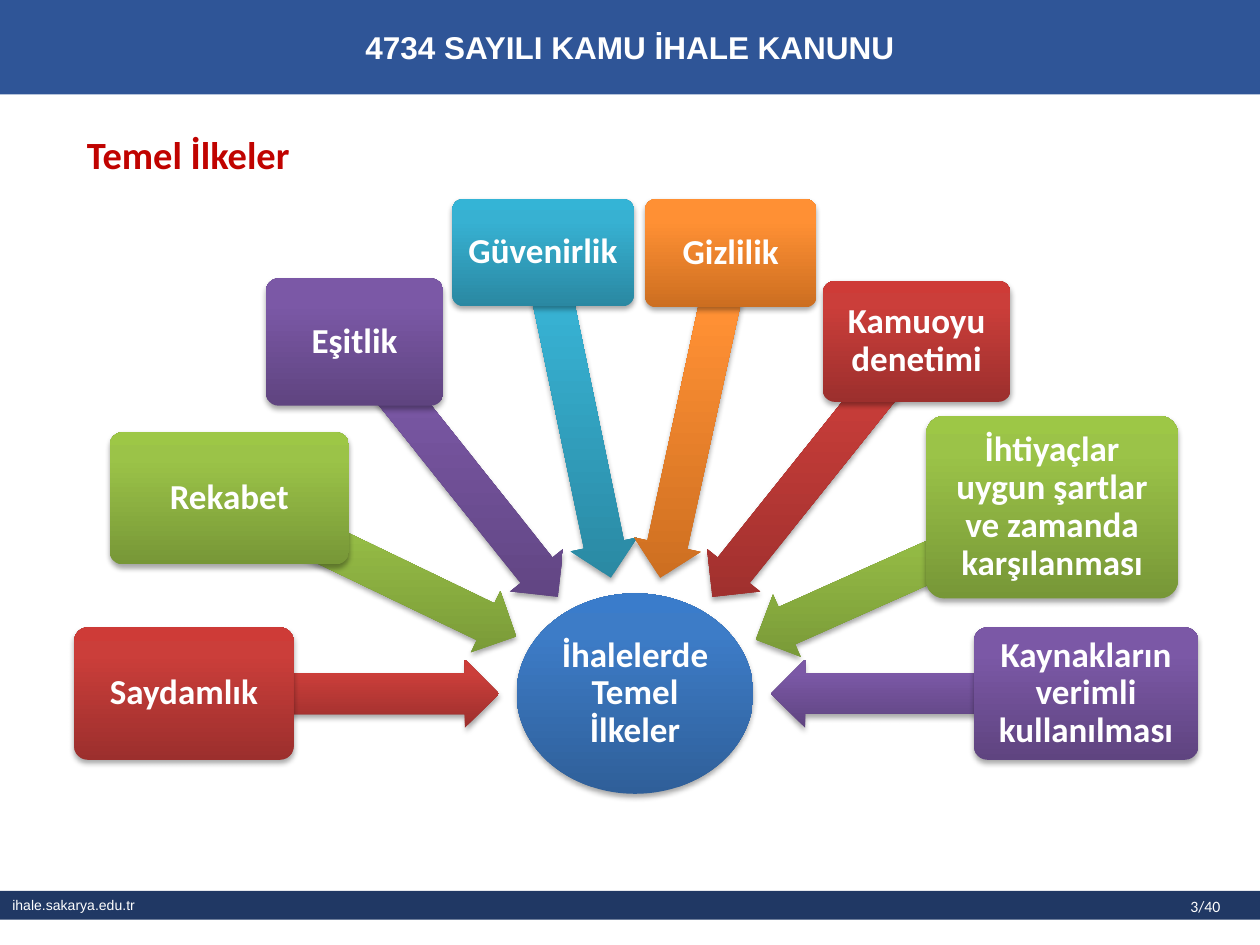
"""Builds the slide on the basic principles of public procurement."""
from math import atan2, cos, degrees, hypot, sin

from pptx import Presentation
from pptx.dml.color import RGBColor
from pptx.enum.shapes import MSO_SHAPE
from pptx.enum.text import MSO_ANCHOR, MSO_AUTO_SIZE, PP_ALIGN
from pptx.oxml import parse_xml
from pptx.oxml.ns import nsdecls
from pptx.util import Inches, Pt

THEME = {
    "band": "2F5597", "foot": "203864", "title": "C00300", "text": "FFFFFF",
    "blue": ("2F5F99", "3D7CC7", "3A7CCB"),
    "red": ("9C2F2D", "CB3E3A", "CE3B37"),
    "green": ("779737", "9BC348", "9DC746"),
    "purple": ("5F4480", "7B58A6", "7C57A8"),
    "teal": ("2A88A2", "37B1D2", "34B4D6"),
    "orange": ("CC6E20", "FF9034", "FF9136"),
    "head": "Arial", "body": "Calibri",
    "size": {"title": 22, "node": 20, "band": 18, "page": 9, "foot": 8},
}
SIZE = THEME["size"]

TITLE = "Temel İlkeler"
BAND = "4734 SAYILI KAMU İHALE KANUNU"
FOOT = "ihale.sakarya.edu.tr"
PAGE = "3/40"
HUB = ("İhalelerde Temel İlkeler", "blue", (4.1, 4.71, 1.88, 1.59))
NODES = [
    ("Saydamlık", "red", (0.59, 4.98, 1.74, 1.05)),
    ("Rekabet", "green", (0.87, 3.43, 1.9, 1.05)),
    ("Eşitlik", "purple", (2.11, 2.21, 1.41, 1.01)),
    ("Güvenirlik", "teal", (3.59, 1.58, 1.44, 0.85)),
    ("Gizlilik", "orange", (5.12, 1.58, 1.36, 0.86)),
    ("Kamuoyu denetimi", "red", (6.53, 2.23, 1.49, 0.96)),
    ("İhtiyaçlar uygun şartlar ve zamanda karşılanması", "green", (7.35, 3.3, 2, 1.45)),
    ("Kaynakların verimli kullanılması", "purple", (7.73, 4.98, 1.78, 1.05)),
]
THICK, GAP = 0.54, 0.14


def write(shape, text, size, font, color="text", bold=True, align=PP_ALIGN.CENTER,
          anchor=MSO_ANCHOR.MIDDLE, inset=None, line=None):
    frame = shape.text_frame
    frame.word_wrap = True
    frame.auto_size = MSO_AUTO_SIZE.NONE
    frame.vertical_anchor = anchor
    if inset is not None:
        frame.margin_left = frame.margin_right = Inches(inset)
        frame.margin_top = frame.margin_bottom = Inches(inset)
    para = frame.paragraphs[0]
    para.alignment = align
    para.space_before = Pt(0)
    if line:
        para.line_spacing = line
    run = para.add_run()
    run.text = text
    run.font.name, run.font.size, run.font.bold = font, Pt(size), bold
    run.font.color.rgb = RGBColor.from_string(THEME[color])


def add_bar(slide, at, color):
    bar = slide.shapes.add_shape(MSO_SHAPE.RECTANGLE, *map(Inches, at))
    bar.shadow.inherit = False
    bar.fill.solid()
    bar.fill.fore_color.rgb = RGBColor.from_string(THEME[color])
    bar.line.fill.background()
    return bar


def add_glow(slide, kind, at, hue):
    shape = slide.shapes.add_shape(kind, *map(Inches, at))
    stops = "".join(
        f'<a:gs pos="{pos}"><a:srgbClr val="{color}"/></a:gs>'
        for pos, color in zip((0, 80000, 100000), THEME[hue]))
    props = shape.element.spPr
    props.append(parse_xml(
        f'<a:gradFill {nsdecls("a")} rotWithShape="0"><a:gsLst>{stops}</a:gsLst>'
        '<a:lin ang="16200000" scaled="0"/></a:gradFill>'))
    shape.line.fill.background()
    props.append(parse_xml(
        f'<a:effectLst {nsdecls("a")}><a:outerShdw blurRad="40000" dist="23000" '
        'dir="5400000" rotWithShape="0"><a:srgbClr val="000000">'
        '<a:alpha val="35000"/></a:srgbClr></a:outerShdw></a:effectLst>'))
    return shape


def middle(at):
    left, top, width, height = at
    return left + width / 2, top + height / 2


def add_arrow(slide, box, hub, hue):
    (x, y), (hx, hy) = middle(box), middle(hub)
    turn = atan2(y - hy, x - hx)
    edge = 1 / hypot(cos(turn) / (hub[2] / 2), sin(turn) / (hub[3] / 2))
    reach = hypot(x - hx, y - hy)
    near = edge + GAP
    mid = (near + reach) / 2
    size = reach - near
    cx, cy = hx + mid * cos(turn), hy + mid * sin(turn)
    at = (cx - size / 2, cy - THICK / 2, size, THICK)
    arrow = add_glow(slide, MSO_SHAPE.LEFT_ARROW, at, hue)
    arrow.adjustments[0], arrow.adjustments[1] = 0.6, 0.5
    arrow.rotation = degrees(turn) % 360


def main():
    deck = Presentation()
    deck.slide_width, deck.slide_height = Inches(10), Inches(7.5)
    slide = deck.slides.add_slide(deck.slide_layouts[5])
    head, body = THEME["head"], THEME["body"]

    foot = add_bar(slide, (0, 7.07, 10, 0.23), "foot")
    write(foot, FOOT, SIZE["foot"], head, bold=False, align=PP_ALIGN.LEFT)
    write(add_bar(slide, (0, 0, 10, 0.75), "band"), BAND, SIZE["band"], head)
    page = slide.shapes.add_textbox(*map(Inches, (9.35, 7.07, 0.6, 0.25)))
    write(page, PAGE, SIZE["page"], body, bold=False, align=PP_ALIGN.LEFT,
          anchor=MSO_ANCHOR.TOP)

    title = slide.shapes.title
    title.left, title.top, title.width, title.height = map(Inches, (0.59, 1.03, 9.05, 0.47))
    write(title, TITLE, SIZE["title"], body, "title", align=PP_ALIGN.LEFT,
          anchor=MSO_ANCHOR.TOP, line=0.9)

    text, hue, hub = HUB
    disc = add_glow(slide, MSO_SHAPE.OVAL, hub, hue)
    write(disc, text, SIZE["node"], body, inset=0.01, line=0.9)
    for text, hue, at in NODES:
        add_arrow(slide, at, hub, hue)
        box = add_glow(slide, MSO_SHAPE.ROUNDED_RECTANGLE, at, hue)
        box.adjustments[0] = 0.1
        write(box, text, SIZE["node"], body, inset=0.04, line=0.9)
    deck.save("out.pptx")


if __name__ == "__main__":
    main()
